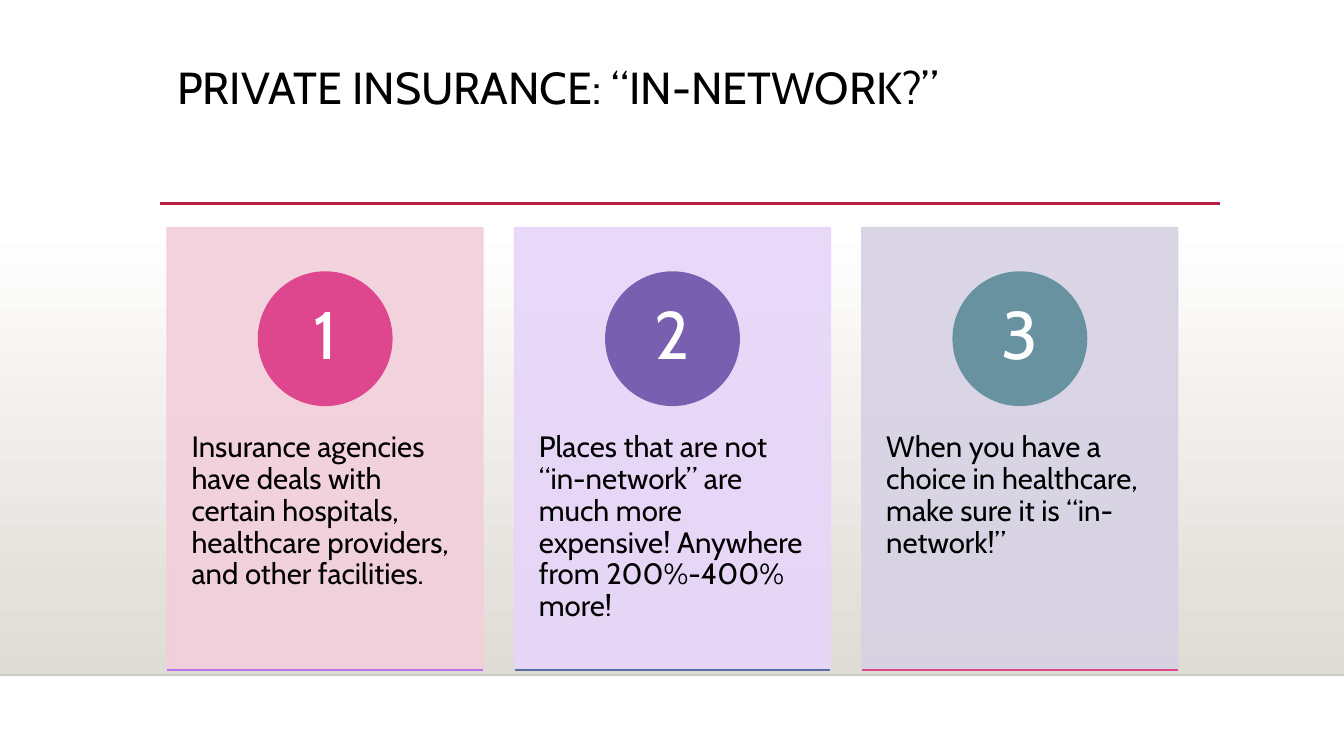
from lxml.etree import SubElement
from pptx import Presentation
from pptx.dml.color import RGBColor
from pptx.enum.shapes import MSO_CONNECTOR as Conn, MSO_SHAPE as Kind
from pptx.enum.text import MSO_ANCHOR as Anchor, PP_ALIGN as Align
from pptx.oxml.ns import qn
from pptx.util import Inches, Pt

FONT = "Cabin"
LEFT, STEP, WIDE = 1.66, 3.445, 3.13
CARDS = [
    ("Insurance agencies have deals with certain hospitals, healthcare providers, "
     "and other facilities.", "F2CFDB", "DE478E", "BC72F0"),
    ("Places that are not “in-network” are much more expensive! "
     "Anywhere from 200%-400% more!", "E7D5F9", "795FAF", "586EA6"),
    ("When you have a choice in healthcare, make sure it is “in-network!”",
     "D7D2E3", "6892A0", "DE478E"),
]


def color(code):
    return RGBColor.from_string(code)


def fade(item, share):
    for node in item._element.iter(qn("a:srgbClr")):
        SubElement(node, qn("a:alpha")).set("val", str(share * 1000))


def add_form(slide, kind, box, code):
    form = slide.shapes.add_shape(kind, *map(Inches, box))
    form.shadow.inherit = False
    form.fill.solid()
    form.fill.fore_color.rgb = color(code)
    form.line.color.rgb = color(code)
    form.line.width = Pt(1.25)
    return form


def add_rule(slide, left, top, width, code, weight):
    rule = slide.shapes.add_connector(
        Conn.STRAIGHT, *map(Inches, (left, top, left + width, top)))
    rule.line.color.rgb = color(code)
    rule.line.width = Pt(weight)
    SubElement(rule._element.spPr, qn("a:effectLst"))
    return rule


def add_text(slide, box, words, size, code="000000", pad=(0.1, 0.05),
             align=Align.LEFT, anchor=Anchor.TOP):
    frame = slide.shapes.add_textbox(*map(Inches, box)).text_frame
    side, edge = map(Inches, pad)
    para = frame.paragraphs[0]
    para.text = words
    styles = [
        (frame, {"word_wrap": True, "vertical_anchor": anchor,
                 "margin_left": side, "margin_right": side,
                 "margin_top": edge, "margin_bottom": edge}),
        (para, {"alignment": align, "line_spacing": 0.9}),
        (para.runs[0].font, {"name": FONT, "size": Pt(size)}),
    ]
    for target, style in styles:
        for name, value in style.items():
            setattr(target, name, value)
    para.runs[0].font.color.rgb = color(code)


def add_floor(slide):
    floor = add_form(slide, Kind.RECTANGLE, (0, 2.21, 13.33, 4.49), "DFDBD5")
    floor.line.fill.background()
    floor.fill.gradient()
    floor.fill.gradient_angle = 270
    for stop, code in zip(floor.fill.gradient_stops, ("FFFFFF", "DFDBD5")):
        stop.color.rgb = color(code)
    fade(add_rule(slide, 0, 6.7, 13.33, "000001", 1), 20)


def add_card(slide, index, words, panel, disc, base):
    left = LEFT + index * STEP
    fade(add_form(slide, Kind.RECTANGLE, (left, 2.26, WIDE, 4.38), panel), 90)
    add_text(slide, (left, 3.93, WIDE, 2.63), words, 21, pad=(0.24, 0.36))
    add_form(slide, Kind.OVAL, (left + 0.905, 2.7, 1.32, 1.32), disc)
    add_text(slide, (left + 1.1, 2.89, 0.93, 0.93), str(index + 1), 48, "FFFFFF",
             (0.1, 0.01), Align.CENTER, Anchor.MIDDLE)
    add_rule(slide, left, 6.65, WIDE, base, 1.25)


def main():
    deck = Presentation()
    deck.slide_width, deck.slide_height = Inches(13.33), Inches(7.5)
    slide = deck.slides.add_slide(deck.slide_layouts[6])
    add_floor(slide)
    add_rule(slide, 1.59, 2.02, 10.51, "B71E42", 2.5)
    add_text(slide, (LEFT, 0.6, 10.02, 1.24), "PRIVATE INSURANCE: “IN-NETWORK?”", 32)
    for index, card in enumerate(CARDS):
        add_card(slide, index, *card)
    deck.save("out.pptx")


if __name__ == "__main__":
    main()
